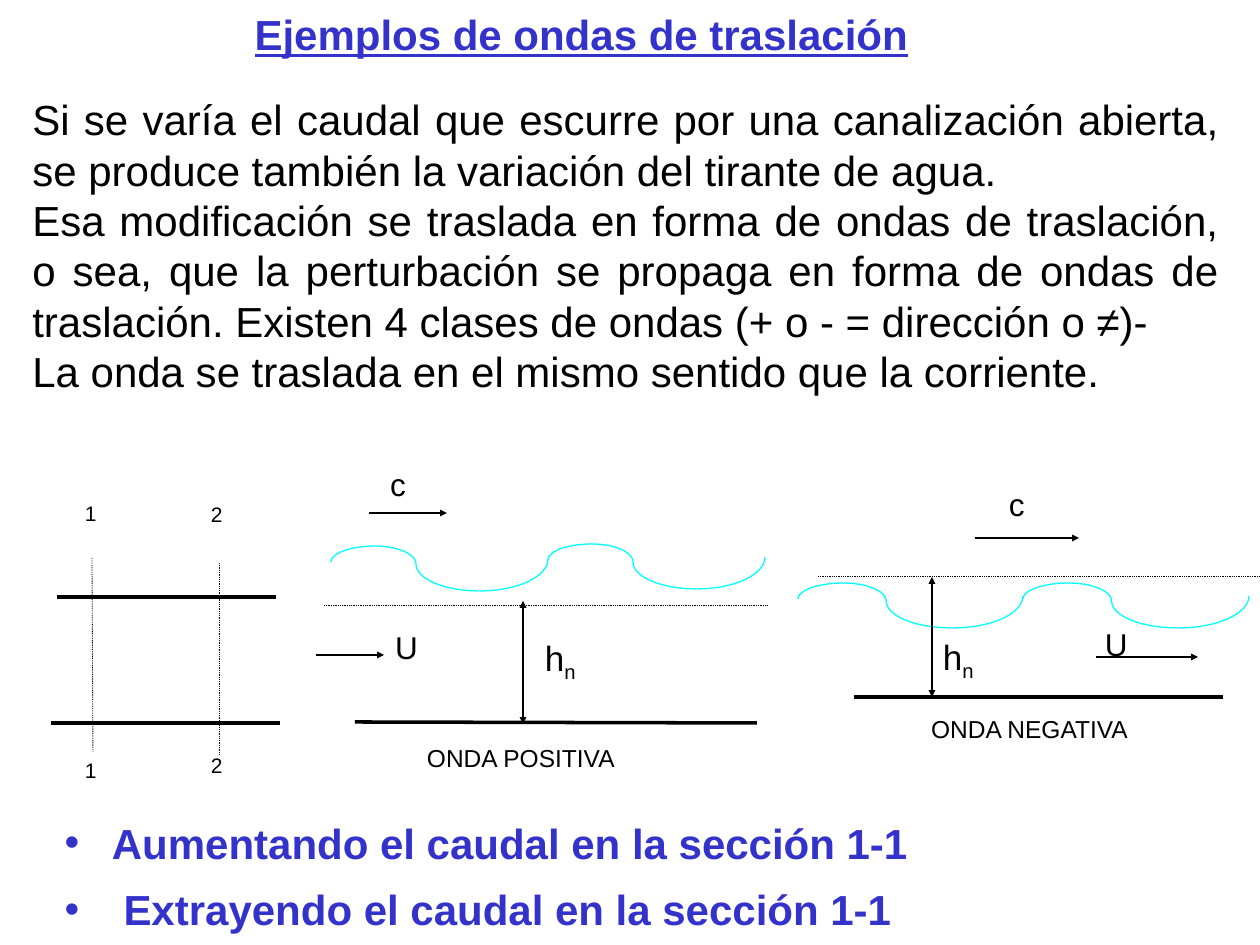
"""Build the slide about translation waves in open channels."""
import math

import pptx
import pptx.dml.color
import pptx.enum.dml
import pptx.enum.shapes
import pptx.enum.text
import pptx.oxml.ns
import pptx.util
from lxml import etree

SCALE = 914400 / 126
BLACK, BLUE, CYAN = "000000", "3333CC", "00FFFF"
ALIGN = pptx.enum.text.PP_ALIGN
ANCHOR = pptx.enum.text.MSO_ANCHOR
qn = pptx.oxml.ns.qn


def px(*lengths):
    return [pptx.util.Emu(round(length * SCALE)) for length in lengths]


def write(paragraph, text, size=24, color=BLACK, bold=False, underline=False,
          align=ALIGN.LEFT, before=0, subscript=False):
    paragraph.alignment = align
    paragraph.space_before = pptx.util.Pt(before)
    run = paragraph.add_run()
    run.text = text
    run.font.name = "Arial"
    run.font.size = pptx.util.Pt(size)
    run.font.bold = bold
    run.font.underline = underline
    run.font.color.rgb = pptx.dml.color.RGBColor.from_string(color)
    if subscript:
        run.font._element.set("baseline", "-25000")


presentation = pptx.Presentation()
presentation.slide_width, presentation.slide_height = px(1260, 945)
slide = presentation.slides.add_slide(presentation.slide_layouts[1])

title = slide.shapes.title
title.left, title.top, title.width, title.height = px(242, -2, 692, 72)
title.text_frame.auto_size = pptx.enum.text.MSO_AUTO_SIZE.NONE
title.text_frame.word_wrap = False
title.text_frame.vertical_anchor = ANCHOR.MIDDLE
write(title.text_frame.paragraphs[0], "Ejemplos de ondas de traslación",
      color=BLUE, bold=True, underline=True)

intro = slide.shapes.add_textbox(*px(20, 86, 1211, 318)).text_frame
intro.word_wrap = True
intro.vertical_anchor = ANCHOR.MIDDLE
intro_texts = [
    "Si se varía el caudal que escurre por una canalización abierta, "
    "se produce también la variación del tirante de agua.",
    "Esa modificación se traslada en forma de ondas de traslación, o sea, "
    "que la perturbación se propaga en forma de ondas de traslación. "
    "Existen 4 clases de ondas (+ o - = dirección o ≠)-",
    "La onda se traslada en el mismo sentido que la corriente.",
]
for index, text in enumerate(intro_texts):
    paragraph = intro.add_paragraph() if index else intro.paragraphs[0]
    write(paragraph, text, align=ALIGN.JUSTIFY)

line_styles = {
    "wall": (2, None, []),
    "dotted": (0.5, pptx.enum.dml.MSO_LINE.ROUND_DOT, []),
    "arrow": (0.75, None, ["a:tailEnd"]),
    "depth": (0.75, None, ["a:headEnd", "a:tailEnd"]),
}
quarter_arcs = [
    (44, 0, 0, 16),
    (44, 0, 85, 18),
    (148, 45, 85, 18),
    (149, 45, 217, 13),
]
diagrams = [
    {
        "lines": [
            ("wall", 57, 597, 276, 597),
            ("wall", 51, 723, 280, 723),
            ("dotted", 92, 558, 93, 752),
            ("dotted", 219, 563, 219, 755),
        ],
        "waves": [],
        "labels": [
            ("1", 12, 84, 757, 44, 55),
            ("2", 12, 210, 752, 44, 45),
            ("1", 12, 84, 500, 44, 55),
            ("2", 12, 210, 501, 44, 45),
        ],
    },
    {
        "lines": [
            ("wall", 355, 722, 757, 723),
            ("dotted", 324, 605, 767, 605),
            ("arrow", 316, 655, 384, 655),
            ("arrow", 369, 513, 447, 513),
            ("depth", 523, 601, 523, 724),
        ],
        "waves": [(331, 546, 217), (548, 544, 217)],
        "labels": [
            ("c", 18, 389, 464, 32, 44),
            ("U", 18, 394, 627, 45, 58),
            ("h", 20, 544, 635, 58, 58),
            ("ONDA POSITIVA", 14, 426, 742, 228, 52),
        ],
    },
    {
        "lines": [
            ("wall", 854, 697, 1223, 697),
            ("dotted", 818, 576, 1260, 576),
            ("arrow", 1096, 657, 1198, 657),
            ("arrow", 975, 538, 1079, 538),
            ("depth", 932, 577, 932, 697),
        ],
        "waves": [(798, 583, 225), (1023, 583, 226)],
        "labels": [
            ("h", 20, 942, 634, 60, 58),
            ("c", 18, 1008, 484, 33, 45),
            ("U", 18, 1104, 624, 48, 58),
            ("ONDA NEGATIVA", 14, 930, 713, 271, 53),
        ],
    },
]

for diagram in diagrams:
    shapes = slide.shapes.add_group_shape().shapes

    for left, top, period in diagram["waves"]:
        stretch = period / 217
        for apex_x, apex_y, end_x, end_y in quarter_arcs:
            points = []
            for step in range(13):
                angle = math.pi / 2 * step / 12
                x = apex_x + (end_x - apex_x) * math.sin(angle)
                y = end_y + (apex_y - end_y) * math.cos(angle)
                points.append(px(left + x * stretch, top + y))
            builder = shapes.build_freeform(*points[0])
            builder.add_line_segments(points[1:], close=False)
            arc = builder.convert_to_shape()
            arc.shadow.inherit = False
            arc.fill.background()
            arc.line.color.rgb = pptx.dml.color.RGBColor.from_string(CYAN)
            arc.line.width = pptx.util.Pt(0.75)

    for style, *ends in diagram["lines"]:
        width, dash, arrowheads = line_styles[style]
        connector = shapes.add_connector(
            pptx.enum.shapes.MSO_CONNECTOR.STRAIGHT, *px(*ends))
        connector.line.color.rgb = pptx.dml.color.RGBColor.from_string(BLACK)
        connector.line.width = pptx.util.Pt(width)
        if dash:
            connector.line.dash_style = dash
        properties = connector._element.spPr
        outline = properties.find(qn("a:ln"))
        for arrowhead in arrowheads:
            etree.SubElement(outline, qn(arrowhead), type="triangle", w="sm", len="sm")
        etree.SubElement(properties, qn("a:effectLst"))

    for text, size, *box in diagram["labels"]:
        frame = shapes.add_textbox(*px(*box)).text_frame
        frame.word_wrap = True
        frame.margin_left, frame.margin_top, frame.margin_right, frame.margin_bottom = px(1, 1, 1, 1)
        write(frame.paragraphs[0], text, size=size)
        if text == "h":
            write(frame.paragraphs[0], "n", size=size, subscript=True)

body = slide.placeholders[1]
body.left, body.top, body.width, body.height = px(52, 811, 1160, 127)
body.text_frame.auto_size = pptx.enum.text.MSO_AUTO_SIZE.NONE
write(body.text_frame.paragraphs[0], "Aumentando el caudal en la sección 1-1",
      color=BLUE, bold=True)
write(body.text_frame.add_paragraph(), " Extrayendo el caudal en la sección 1-1",
      color=BLUE, bold=True, before=9)

presentation.save("out.pptx")
